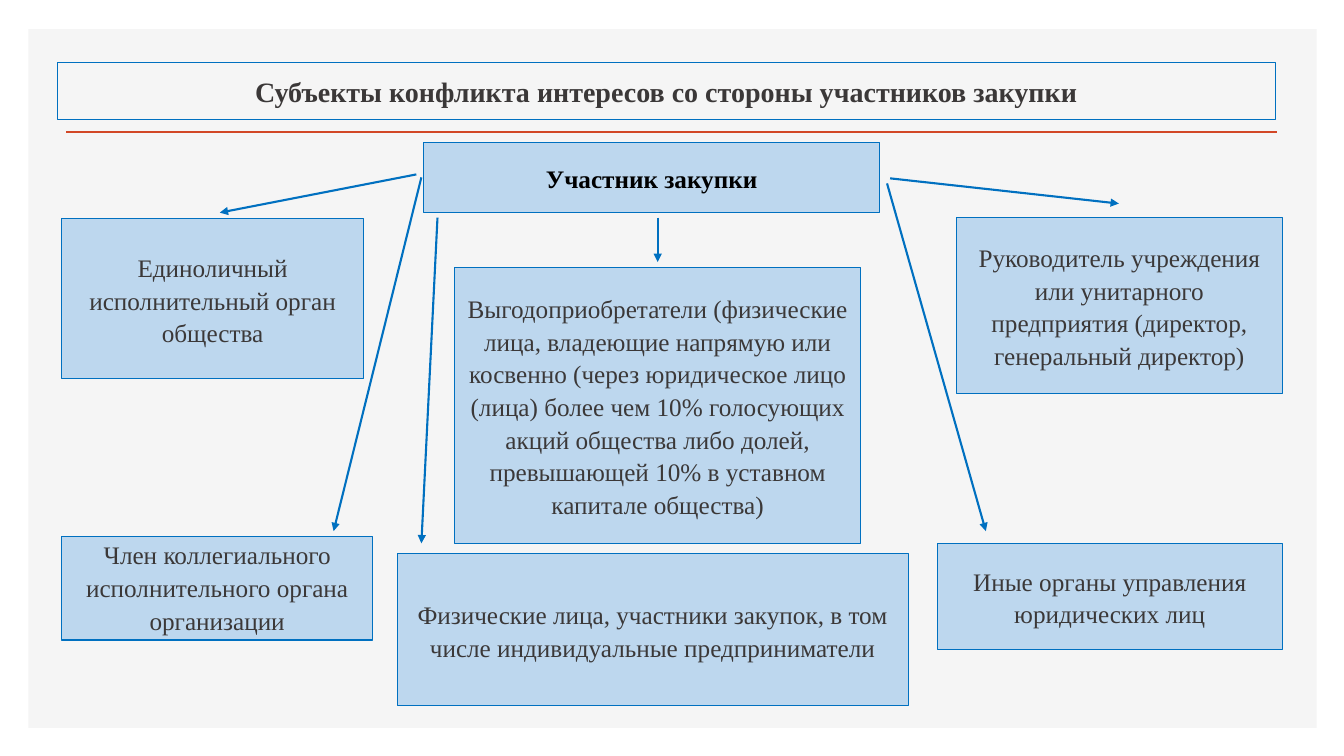
from lxml import etree
from pptx import Presentation
from pptx.dml.color import RGBColor
from pptx.enum.shapes import MSO_CONNECTOR, MSO_SHAPE
from pptx.enum.text import MSO_ANCHOR, PP_ALIGN
from pptx.oxml.ns import qn
from pptx.util import Pt

COLORS = {
    "panel": "F5F5F5",
    "accent": "D24726",
    "blue": "0070C0",
    "box": "BDD7EE",
    "text": "3B3838",
    "black": "000000",
}

deck = Presentation()
deck.slide_width, deck.slide_height = Pt(960), Pt(540)
slide = deck.slides.add_slide(deck.slide_layouts[6])


def add_box(text, left, top, width, height, fill="box", line="blue", size=18,
            color="text", bold=False, anchor=MSO_ANCHOR.MIDDLE, spacing=1.08):
    box = slide.shapes.add_shape(
        MSO_SHAPE.RECTANGLE, Pt(left), Pt(top), Pt(width), Pt(height))
    box.shadow.inherit = False
    if fill:
        box.fill.solid()
        box.fill.fore_color.rgb = RGBColor.from_string(COLORS[fill])
    else:
        box.fill.background()
    if line:
        box.line.color.rgb = RGBColor.from_string(COLORS[line])
        box.line.width = Pt(0.75)
    else:
        box.line.fill.background()
    if text:
        frame = box.text_frame
        frame.word_wrap = True
        frame.vertical_anchor = anchor
        paragraph = frame.paragraphs[0]
        paragraph.alignment = PP_ALIGN.CENTER
        paragraph.line_spacing = spacing
        run = paragraph.add_run()
        run.text = text
        run.font.name = "Times New Roman"
        run.font.size = Pt(size)
        run.font.bold = bold
        run.font.color.rgb = RGBColor.from_string(COLORS[color])


def add_line(x1, y1, x2, y2, color="blue", width=1.5, arrow=True):
    line = slide.shapes.add_connector(
        MSO_CONNECTOR.STRAIGHT, Pt(x1), Pt(y1), Pt(x2), Pt(y2))
    line.line.color.rgb = RGBColor.from_string(COLORS[color])
    line.line.width = Pt(width)
    if arrow:
        etree.SubElement(line.line._get_or_add_ln(), qn("a:tailEnd"), type="triangle")
    etree.SubElement(line._element.spPr, qn("a:effectLst"))


# Background panel, heading and its rule
add_box("", 20.2, 20.9, 920.2, 499, fill="panel", line=None)
add_line(47.5, 94.3, 912.2, 94.3, color="accent", width=2, arrow=False)
add_box("Субъекты конфликта интересов со стороны участников закупки",
        41, 44.6, 869.8, 41, fill=None, size=20, bold=True, spacing=1)

# Participant at the top of the scheme
add_box("Участник закупки", 302.4, 101.5, 326.2, 50.4, color="black", bold=True)

# Subjects of the conflict of interest
subjects = [
    ("Единоличный исполнительный орган общества",
     43.9, 156.2, 216, 114.5, MSO_ANCHOR.MIDDLE),
    ("Член коллегиального исполнительного органа организации",
     43.9, 383, 222.5, 74.2, MSO_ANCHOR.BOTTOM),
    ("Выгодоприобретатели (физические лица, владеющие напрямую или косвенно "
     "(через юридическое лицо (лица) более чем 10% голосующих акций общества "
     "либо долей, превышающей 10% в уставном капитале общества)",
     324.7, 190.8, 290.2, 197.3, MSO_ANCHOR.MIDDLE),
    ("Руководитель учреждения или унитарного предприятия (директор, "
     "генеральный директор)",
     683.3, 155.5, 232.6, 125.3, MSO_ANCHOR.MIDDLE),
    ("Иные органы управления юридических лиц",
     669.6, 388.1, 246.2, 75.6, MSO_ANCHOR.MIDDLE),
    ("Физические лица, участники закупок, в том числе индивидуальные "
     "предприниматели",
     283.7, 395.3, 365, 108.7, MSO_ANCHOR.MIDDLE),
]
for text, left, top, width, height, anchor in subjects:
    add_box(text, left, top, width, height, anchor=anchor)

# Arrows from the participant to each subject
arrows = [
    (297.4, 124.6, 157, 151.9),
    (312.5, 155.5, 301, 388.1),
    (301, 126.7, 238.3, 379.4),
    (469.8, 155.5, 469.8, 187.2),
    (635.8, 127.4, 799.2, 145.4),
    (633.6, 131, 704.2, 379.4),
]
for ends in arrows:
    add_line(*ends)

deck.save("out.pptx")
